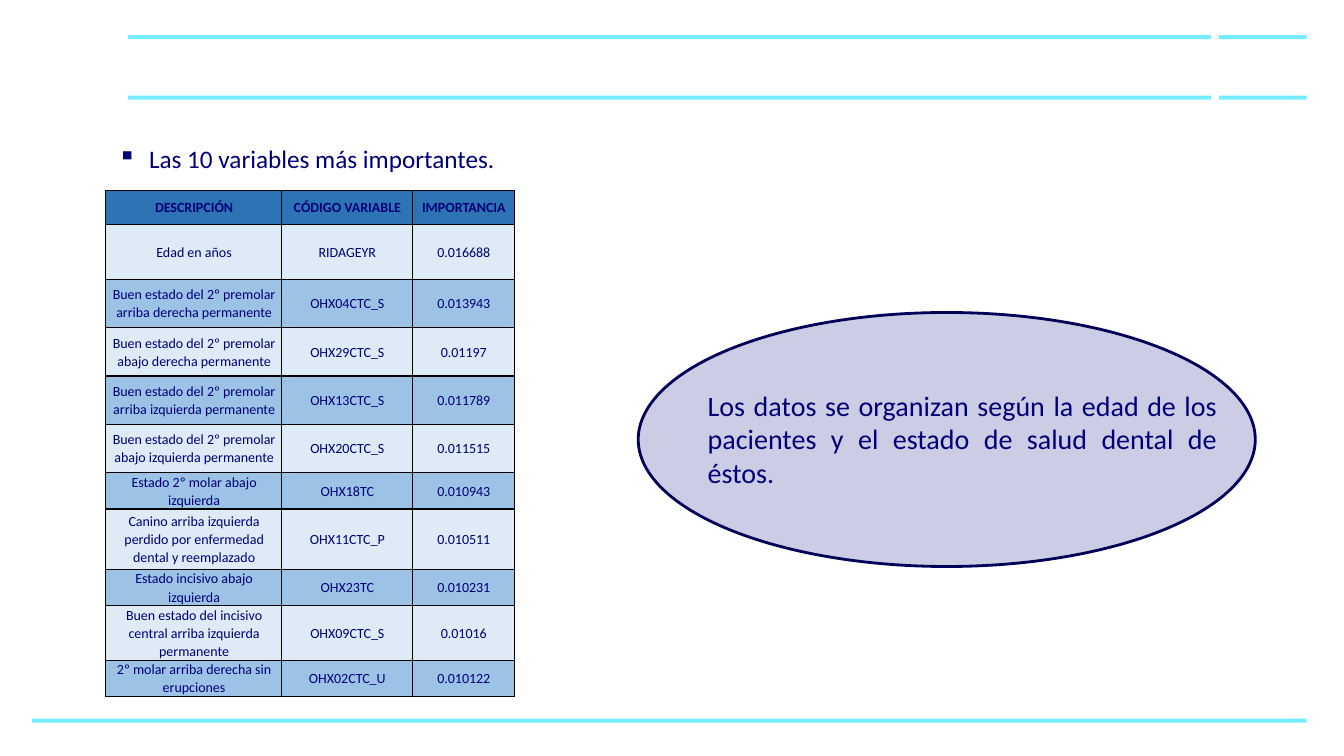
from pptx import Presentation
from pptx.util import Inches, Pt
from pptx.dml.color import RGBColor
from pptx.enum.shapes import MSO_SHAPE
from pptx.enum.text import PP_ALIGN, MSO_ANCHOR
from pptx.oxml.ns import qn
from lxml.etree import SubElement

CYAN = RGBColor(0x73, 0xED, 0xFF)
NAVY = RGBColor(0x00, 0x00, 0x78)
EDGE = RGBColor(0x00, 0x00, 0x59)
HEAD = RGBColor(0x2E, 0x74, 0xB5)
PALE = RGBColor(0xDE, 0xEA, 0xF6)
BLUE = RGBColor(0x9C, 0xC2, 0xE5)

ROWS = [
    (0.34, "DESCRIPCIÓN", "CÓDIGO VARIABLE", "IMPORTANCIA"),
    (0.54, "Edad en años", "RIDAGEYR", "0.016688"),
    (0.48, "Buen estado del 2º premolar arriba derecha permanente", "OHX04CTC_S", "0.013943"),
    (0.48, "Buen estado del 2º premolar abajo derecha permanente", "OHX29CTC_S", "0.01197"),
    (0.48, "Buen estado del 2º premolar arriba izquierda permanente", "OHX13CTC_S", "0.011789"),
    (0.48, "Buen estado del 2º premolar abajo izquierda permanente", "OHX20CTC_S", "0.011515"),
    (0.36, "Estado 2º molar abajo izquierda", "OHX18TC", "0.010943"),
    (0.6, "Canino arriba izquierda perdido por enfermedad dental y reemplazado", "OHX11CTC_P", "0.010511"),
    (0.36, "Estado incisivo abajo izquierda", "OHX23TC", "0.010231"),
    (0.54, "Buen estado del incisivo central arriba izquierda permanente", "OHX09CTC_S", "0.01016"),
    (0.36, "2º molar arriba derecha sin erupciones", "OHX02CTC_U", "0.010122"),
]
COLS = [1.74, 1.3, 1.01]


def style(para, size, bold=False):
    for run in para.runs:
        run.font.name = "Calibri"
        run.font.size = Pt(size)
        run.font.bold = bold
        run.font.color.rgb = NAVY


def add_text(x, y, w, h, text, size):
    box = slide.shapes.add_textbox(Inches(x), Inches(y), Inches(w), Inches(h))
    box.text_frame.word_wrap = True
    para = box.text_frame.paragraphs[0]
    para.text = text
    style(para, size)
    return para


deck = Presentation()
deck.slide_width = Inches(13.33)
deck.slide_height = Inches(7.5)
slide = deck.slides.add_slide(deck.slide_layouts[6])

bars = [(0.32, 7.13, 12.64)]
bars += [(x, y, w) for x, w in ((1.27, 10.74), (12.09, 0.87)) for y in (0.95, 0.35)]
for x, y, w in bars:
    bar = slide.shapes.add_shape(MSO_SHAPE.RECTANGLE, Inches(x), Inches(y), Inches(w), Inches(0.04))
    bar.shadow.inherit = False
    bar.fill.solid()
    bar.fill.fore_color.rgb = CYAN
    bar.line.fill.background()

table = slide.shapes.add_table(
    len(ROWS), len(COLS), Inches(1.05), Inches(1.89), Inches(4.05), Inches(5.02)).table
for col, width in zip(table.columns, COLS):
    col.width = Inches(width)
for i, (height, *texts) in enumerate(ROWS):
    table.rows[i].height = Inches(height)
    for j, text in enumerate(texts):
        cell = table.cell(i, j)
        cell.margin_left = cell.margin_right = Inches(0.03)
        cell.margin_top = cell.margin_bottom = 0
        cell.vertical_anchor = MSO_ANCHOR.MIDDLE
        props = cell._tc.get_or_add_tcPr()
        for side in ("a:lnL", "a:lnR", "a:lnT", "a:lnB"):
            line = SubElement(props, qn(side), w=str(Pt(1)))
            SubElement(SubElement(line, qn("a:solidFill")), qn("a:srgbClr"), val="000000")
        cell.fill.solid()
        cell.fill.fore_color.rgb = HEAD if i == 0 else PALE if i % 2 else BLUE
        para = cell.text_frame.paragraphs[0]
        para.text = text
        para.alignment = PP_ALIGN.CENTER
        para.line_spacing = 1.07
        para._p.get_or_add_pPr().set("marL", str(Inches(0.01)))
        style(para, 10, i == 0)

lead = add_text(1.07, 1.37, 5.02, 0.4, "Las 10 variables más importantes.", 18)
props = lead._p.get_or_add_pPr()
props.set("marL", str(Inches(0.31)))
props.set("indent", str(Inches(-0.31)))
SubElement(props, qn("a:buChar"), char="▪")

note = add_text(
    6.92, 3.8, 5.25, 1.11,
    "Los datos se organizan según la edad de los pacientes y el estado de salud dental de éstos.", 20)
note.alignment = PP_ALIGN.JUSTIFY

oval = slide.shapes.add_shape(MSO_SHAPE.OVAL, Inches(6.33), Inches(3.1), Inches(6.12), Inches(2.52))
oval.shadow.inherit = False
oval.fill.solid()
oval.fill.fore_color.rgb = NAVY
tint = oval._element.spPr.find(qn("a:solidFill")).find(qn("a:srgbClr"))
SubElement(tint, qn("a:alpha"), val="20000")
oval.line.color.rgb = EDGE
oval.line.width = Pt(2)

deck.save("out.pptx")
